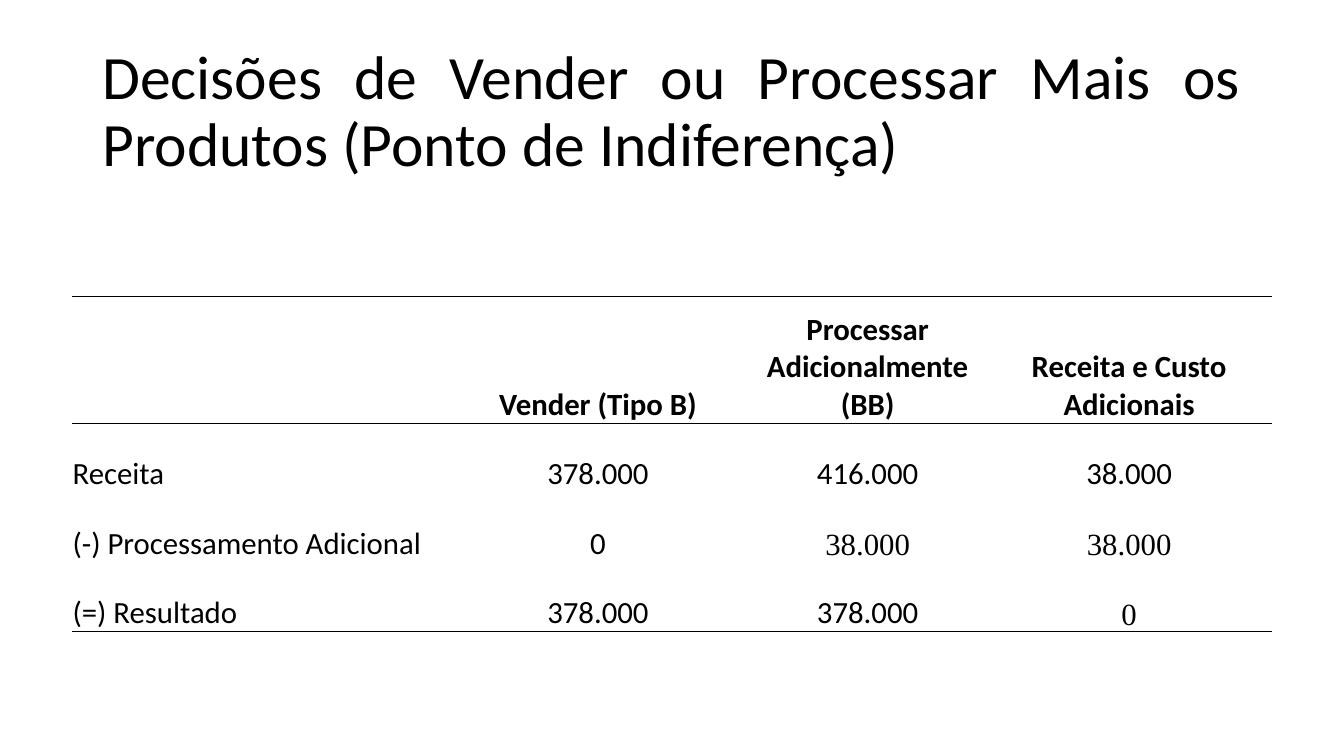
from lxml.etree import SubElement
from pptx import Presentation
from pptx.dml.color import RGBColor
from pptx.enum.text import MSO_ANCHOR, PP_ALIGN
from pptx.oxml.ns import qn
from pptx.util import Cm, Pt

BLACK = RGBColor(0, 0, 0)
BODY_FONT = "Calibri"
ADJUSTED_FONT = "Times New Roman"
NO_GRID_STYLE = "{2D5ABB26-0587-4C30-8999-92F81FD0307C}"


def format_font(run, **values):
    for name, value in values.items():
        setattr(run.font, name, value)
    run.font.color.rgb = BLACK


def add_rule(cell, side):
    rule = SubElement(cell._tc.get_or_add_tcPr(), qn(f"a:{side}"), w=str(Pt(1)))
    fill = SubElement(rule, qn("a:solidFill"))
    SubElement(fill, qn("a:srgbClr"), val=str(BLACK))


deck = Presentation()
deck.slide_width, deck.slide_height = Cm(33.87), Cm(19.05)
slide = deck.slides.add_slide(deck.slide_layouts[6])

# Title
heading = slide.shapes.add_textbox(Cm(2.33), Cm(1.01), Cm(29.21), Cm(3.68)).text_frame
heading.word_wrap = True
heading.vertical_anchor = MSO_ANCHOR.MIDDLE
heading_line = heading.paragraphs[0]
heading_line.alignment = PP_ALIGN.JUSTIFY
heading_line.line_spacing = 0.9
heading_run = heading_line.add_run()
heading_run.text = "Decisões de Vender ou Processar Mais os Produtos (Ponto de Indiferença)"
format_font(heading_run, name=BODY_FONT, size=Pt(44))

# Comparison of selling and processing further
comparison_rows = [
    ["", "Vender (Tipo B)", "Processar Adicionalmente (BB)", "Receita e Custo Adicionais"],
    ["Receita", "378.000", "416.000", "38.000"],
    ["(-) Processamento Adicional", "0", "38.000", "38.000"],
    ["(=) Resultado", "378.000", "378.000", "0"],
]
adjusted_cells = {(2, 2), (2, 3), (3, 3)}
column_widths = [Cm(9.45), Cm(7.62), Cm(5.97), Cm(7.21)]
row_heights = [Cm(3.2)] + [Cm(1.75)] * 3
last_row = len(comparison_rows) - 1

comparison = slide.shapes.add_table(
    len(row_heights), len(column_widths), Cm(1.81), Cm(7.47),
    sum(column_widths), sum(row_heights)).table
comparison._tbl.tblPr.find(qn("a:tableStyleId")).text = NO_GRID_STYLE
comparison.first_row = comparison.horz_banding = False
for column, width in zip(comparison.columns, column_widths):
    column.width = width
for row, height in zip(comparison.rows, row_heights):
    row.height = height

cell_format = {
    "vertical_anchor": MSO_ANCHOR.BOTTOM,
    "margin_left": Cm(0.02),
    "margin_right": Cm(0.02),
    "margin_top": Cm(0.02),
    "margin_bottom": Cm(0),
}
for r, entries in enumerate(comparison_rows):
    for c, entry in enumerate(entries):
        cell = comparison.cell(r, c)
        for name, value in cell_format.items():
            setattr(cell, name, value)

        # Rules around the header and below the result
        if r == 0:
            add_rule(cell, "lnT")
        if r in (0, last_row):
            add_rule(cell, "lnB")
        cell.fill.background()

        # Entry
        if entry:
            line = cell.text_frame.paragraphs[0]
            line.alignment = PP_ALIGN.CENTER if c else PP_ALIGN.LEFT
            run = line.add_run()
            run.text = entry
            font_name = ADJUSTED_FONT if (r, c) in adjusted_cells else BODY_FONT
            format_font(run, name=font_name, size=Pt(22), bold=r == 0)

deck.save("out.pptx")
